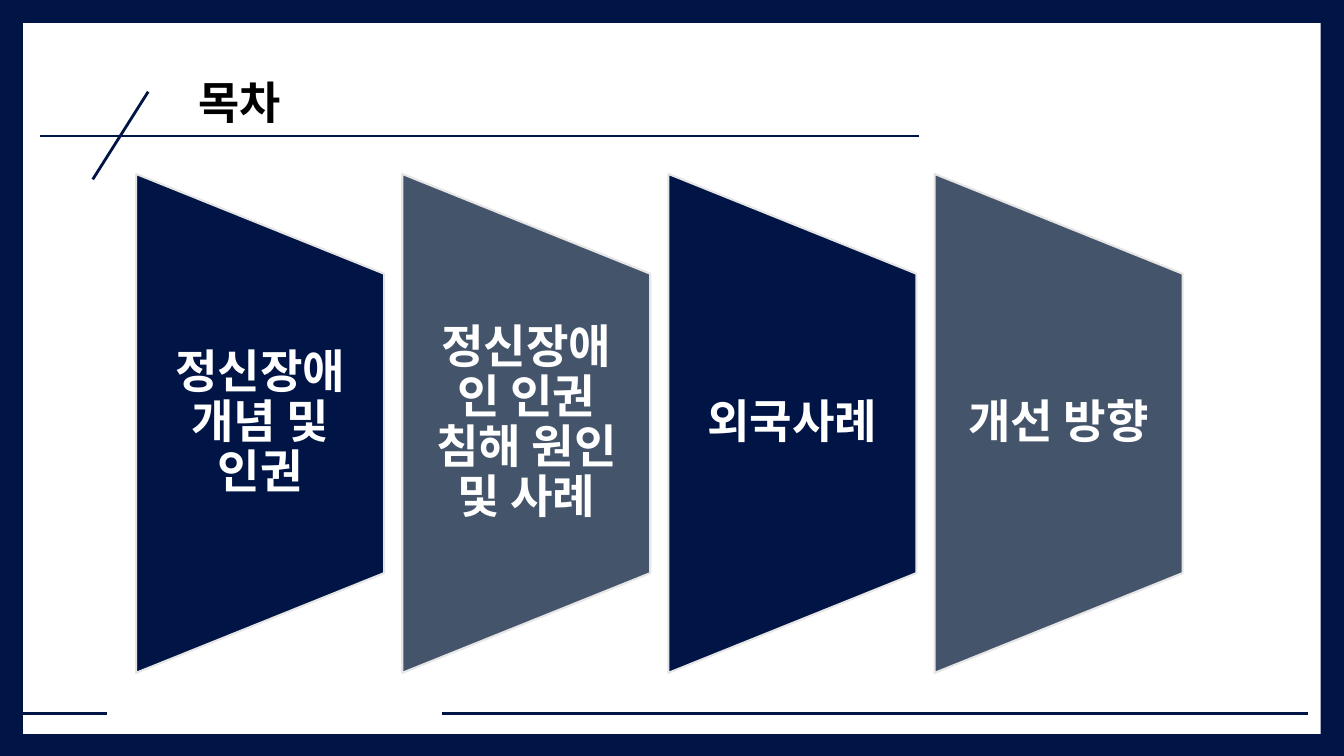
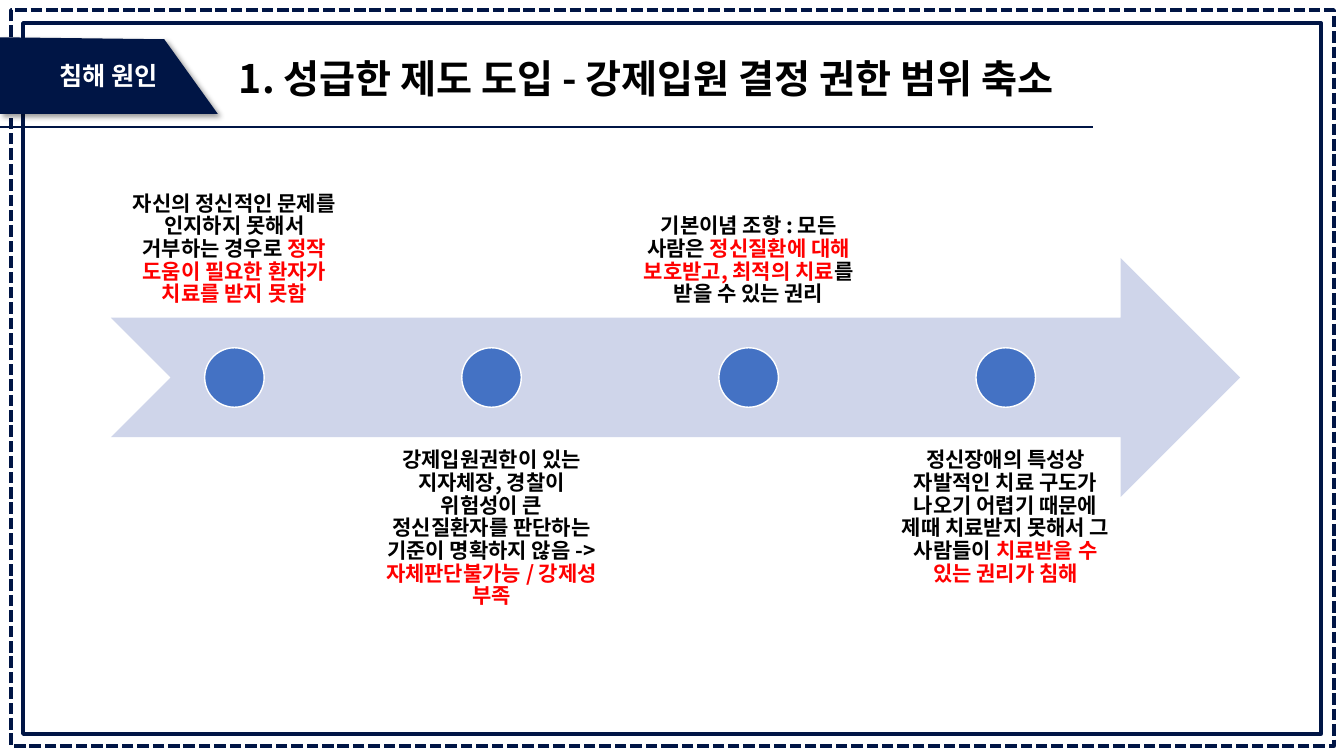
from dataclasses import dataclass
from typing import Any

from lxml import etree
from pptx import Presentation
from pptx.dml.color import RGBColor
from pptx.enum.dml import MSO_LINE
from pptx.enum.shapes import MSO_CONNECTOR, MSO_SHAPE
from pptx.enum.text import MSO_ANCHOR, MSO_AUTO_SIZE, PP_ALIGN
from pptx.oxml.ns import qn
from pptx.shapes.autoshape import Shape
from pptx.slide import Slide
from pptx.util import Inches, Pt

RECTANGLE = MSO_SHAPE.RECTANGLE
TRAPEZOID = MSO_SHAPE.FLOWCHART_MANUAL_OPERATION
NOTCHED_ARROW = MSO_SHAPE.NOTCHED_RIGHT_ARROW
OVAL = MSO_SHAPE.OVAL
STRAIGHT = MSO_CONNECTOR.STRAIGHT
SQUARE_DOT = MSO_LINE.SQUARE_DOT
LEFT, CENTER = PP_ALIGN.LEFT, PP_ALIGN.CENTER
TOP, MIDDLE, BOTTOM = MSO_ANCHOR.TOP, MSO_ANCHOR.MIDDLE, MSO_ANCHOR.BOTTOM
NO_AUTOFIT = MSO_AUTO_SIZE.NONE


@dataclass(frozen=True)
class Theme:
    navy: str = "001545"
    slate: str = "44546A"
    white: str = "FFFFFF"
    black: str = "000000"
    red: str = "FF0000"
    pale_gray: str = "E7E6E6"
    pale_blue: str = "CFD5EA"
    blue: str = "4472C4"
    latin: str = "Arial"
    korean: str = "Noto Sans CJK KR"
    contents_title: float = 32
    topic_title: float = 28
    chapter: float = 33
    tag: float = 18
    note: float = 15
    rule: float = 2


THEME = Theme()


@dataclass(frozen=True)
class Box:
    left: float
    top: float
    width: float
    height: float

    def lengths(self) -> tuple[int, ...]:
        return tuple(Inches(v) for v in (self.left, self.top, self.width, self.height))


@dataclass(frozen=True)
class Outline:
    color: str
    width: float
    dash: Any = None


@dataclass(frozen=True)
class Rule:
    x1: float
    y1: float
    x2: float
    y2: float


@dataclass(frozen=True)
class Span:
    text: str
    color: str = THEME.black


@dataclass(frozen=True)
class TextStyle:
    size: float
    font: str = THEME.korean
    align: Any = CENTER
    anchor: Any = MIDDLE
    margin_x: float = 0.1
    margin_y: float = 0.05
    spacing: float = 1.0


@dataclass(frozen=True)
class Chapter:
    label: str
    fill: str
    font: str = THEME.korean


@dataclass(frozen=True)
class Milestone:
    spans: tuple[Span, ...]
    above: bool


FRAME = Box(0.23, 0.23, 12.87, 7.05)
DOTTED_FRAME = Box(0.11, 0.1, 13.12, 7.3)
CONTENTS_RULES = (
    Rule(9.12, 1.35, 0.4, 1.35),
    Rule(0.92, 1.78, 1.47, 0.91),
    Rule(12.97, 7.08, 4.38, 7.08),
    Rule(1.06, 7.08, 0.23, 7.08),
)
TOPIC_RULES = (Rule(10.84, 1.26, -0.02, 1.26),)
TAG_OUTLINE = ((0, 0.37), (1.63, 0.39), (2.16, 1.13), (0, 1.13))
CHAPTERS = (
    Chapter("정신장애 개념 및 인권", THEME.navy),
    Chapter("정신장애인 인권 침해 원인 및 사례", THEME.slate, THEME.latin),
    Chapter("외국사례", THEME.navy),
    Chapter("개선 방향", THEME.slate),
)
MILESTONES = (
    Milestone((
        Span("자신의 정신적인 문제를 인지하지 못해서 거부하는 경우로 "),
        Span("정작 도움이 필요한 환자가 치료를 받지 못함", THEME.red),
    ), True),
    Milestone((
        Span("강제입원권한이 있는 지자체장, 경찰이 위험성이 큰 정신질환자를 판단하는 기준이 명확하지 않음 -> "),
        Span("자체판단불가능 / 강제성 부족", THEME.red),
    ), False),
    Milestone((
        Span("기본이념 조항 : 모든 사람은 "),
        Span("정신질환에 대해 보호받고, 최적의 치료", THEME.red),
        Span("를 받을 수 있는 권리"),
    ), True),
    Milestone((
        Span("정신장애의 특성상 자발적인 치료 구도가 나오기 어렵기 때문에 제때 치료받지 못해서 그 사람들이 "),
        Span("치료받을 수 있는 권리가 침해", THEME.red),
    ), False),
)


def apply_format(target: Any, values: dict[str, Any]) -> None:
    for attribute, value in values.items():
        setattr(target, attribute, value)


def rgb(color: str) -> RGBColor:
    return RGBColor.from_string(color)


def paint(shape: Shape, fill: str | None, outline: Outline | None) -> None:
    shape.shadow.inherit = False
    if fill:
        shape.fill.solid()
        shape.fill.fore_color.rgb = rgb(fill)
    else:
        shape.fill.background()
    if outline:
        shape.line.color.rgb = rgb(outline.color)
        shape.line.width = Pt(outline.width)
        if outline.dash:
            shape.line.dash_style = outline.dash
    else:
        shape.line.fill.background()


def draw_shape(slide: Slide, kind: Any, box: Box, fill: str | None = None,
               outline: Outline | None = None) -> Shape:
    shape = slide.shapes.add_shape(kind, *box.lengths())
    paint(shape, fill, outline)
    return shape


def draw_rules(slide: Slide, rules: tuple[Rule, ...]) -> None:
    for rule in rules:
        ends = (Inches(v) for v in (rule.x1, rule.y1, rule.x2, rule.y2))
        connector = slide.shapes.add_connector(STRAIGHT, *ends)
        connector.line.color.rgb = rgb(THEME.navy)
        connector.line.width = Pt(THEME.rule)
        etree.SubElement(connector.element.spPr, qn("a:effectLst"))


def write(shape: Shape, spans: tuple[Span, ...], style: TextStyle) -> None:
    frame = shape.text_frame
    apply_format(frame, {
        "word_wrap": True,
        "auto_size": NO_AUTOFIT,
        "vertical_anchor": style.anchor,
        "margin_left": Inches(style.margin_x),
        "margin_right": Inches(style.margin_x),
        "margin_top": Inches(style.margin_y),
        "margin_bottom": Inches(style.margin_y),
    })
    paragraph = frame.paragraphs[0]
    apply_format(paragraph, {"alignment": style.align, "line_spacing": style.spacing})
    for span in spans:
        run = paragraph.add_run()
        run.text = span.text
        apply_format(run.font, {"name": style.font, "size": Pt(style.size), "bold": True})
        run.font.color.rgb = rgb(span.color)
        east_asian = etree.SubElement(run.font._element, qn("a:ea"))
        east_asian.set("typeface", THEME.korean)


def draw_text(slide: Slide, box: Box, spans: tuple[Span, ...], style: TextStyle) -> None:
    write(slide.shapes.add_textbox(*box.lengths()), spans, style)


def start_slide(deck: Any, background: str, panel_fill: str | None,
                panel_outline: Outline | None, rules: tuple[Rule, ...]) -> Slide:
    slide = deck.slides.add_slide(deck.slide_layouts.get_by_name("Title Only"))
    slide.background.fill.solid()
    slide.background.fill.fore_color.rgb = rgb(background)
    draw_shape(slide, RECTANGLE, FRAME, panel_fill, panel_outline)
    draw_rules(slide, rules)
    return slide


def place_title(slide: Slide, text: str, box: Box, size: float, font: str) -> None:
    title = slide.shapes.title
    slide.shapes.element.append(title.element)
    apply_format(title, dict(zip(("left", "top", "width", "height"), box.lengths())))
    write(title, (Span(text),), TextStyle(size, font, LEFT, TOP))


def draw_tag(slide: Slide, label: str) -> None:
    start, *corners = TAG_OUTLINE
    builder = slide.shapes.build_freeform(Inches(start[0]), Inches(start[1]))
    builder.add_line_segments([(Inches(x), Inches(y)) for x, y in corners], close=True)
    tag = builder.convert_to_shape()
    paint(tag, THEME.navy, None)
    effects = tag.element.spPr.find(qn("a:effectLst"))
    shadow = etree.SubElement(effects, qn("a:outerShdw"), {
        "blurRad": str(Pt(4)), "dist": str(Pt(3)), "dir": "2700000",
        "algn": "tl", "rotWithShape": "0",
    })
    shade = etree.SubElement(shadow, qn("a:srgbClr"), {"val": THEME.black})
    etree.SubElement(shade, qn("a:alpha"), {"val": "40000"})
    write(tag, (Span(label, THEME.white),), TextStyle(THEME.tag))


def build_contents(deck: Any) -> None:
    slide = start_slide(deck, THEME.navy, THEME.white, None, CONTENTS_RULES)
    place_title(slide, "목차", Box(1.87, 0.69, 6.26, 0.64), THEME.contents_title, THEME.latin)
    first_left, pitch, width, length, middle = 1.35, 2.64, 2.46, 4.95, 4.2
    label_height = 2.97
    for index, chapter in enumerate(CHAPTERS):
        left = first_left + index * pitch
        panel = Box(left + (width - length) / 2, middle - width / 2, length, width)
        trapezoid = draw_shape(slide, TRAPEZOID, panel, chapter.fill,
                               Outline(THEME.pale_gray, 1.5))
        trapezoid.rotation = 270
        draw_text(slide, Box(left, middle - label_height / 2, width, label_height),
                  (Span(chapter.label, THEME.white),),
                  TextStyle(THEME.chapter, chapter.font, margin_x=0.23, margin_y=0,
                            spacing=0.9))


def build_causes(deck: Any) -> None:
    slide = start_slide(deck, THEME.white, None, Outline(THEME.navy, 3), TOPIC_RULES)
    draw_shape(slide, RECTANGLE, DOTTED_FRAME, None, Outline(THEME.navy, 2.75, SQUARE_DOT))
    draw_tag(slide, "침해 원인")
    place_title(slide, "1. 성급한 제도 도입 - 강제입원 결정 권한 범위 축소",
                Box(2.27, 0.49, 9.65, 1.04), THEME.topic_title, THEME.korean)
    arrow = Box(1.1, 2.56, 11.2, 2.37)
    draw_shape(slide, NOTCHED_ARROW, arrow, THEME.pale_blue)
    first_left, pitch, width, dot = 1.11, 2.55, 2.43, 0.59
    dot_top = arrow.top + (arrow.height - dot) / 2
    for index, milestone in enumerate(MILESTONES):
        left = first_left + index * pitch
        top, anchor = (0.79, BOTTOM) if milestone.above else (4.34, TOP)
        draw_text(slide, Box(left, top, width, arrow.height), milestone.spans,
                  TextStyle(THEME.note, anchor=anchor, margin_x=0.12, margin_y=0.12,
                            spacing=0.9))
        draw_shape(slide, OVAL, Box(left + (width - dot) / 2, dot_top, dot, dot),
                   THEME.blue, Outline(THEME.white, 1))


def main() -> None:
    deck = Presentation()
    apply_format(deck, {"slide_width": Inches(13.33), "slide_height": Inches(7.5)})
    build_contents(deck)
    build_causes(deck)
    deck.save("out.pptx")


if __name__ == "__main__":
    main()
